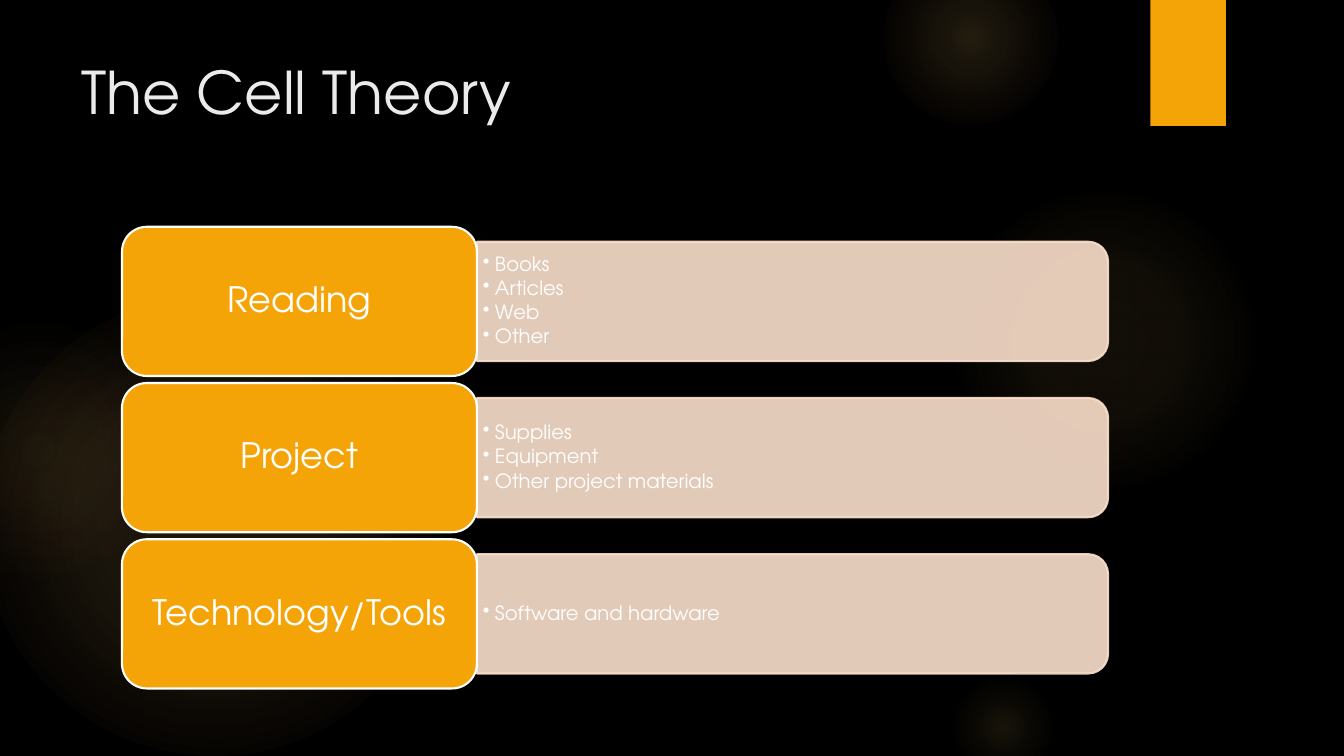
import lxml.etree
import pptx
import pptx.dml.color
import pptx.enum.shapes
import pptx.enum.text
import pptx.oxml
import pptx.oxml.ns
import pptx.util

FONT = "TeX Gyre Adventor"
AMBER, GLOW, PEACH, WHITE = "F5A408", "FAC96A", "FBE0CC", "FFFFFF"
SLIDE_W, SLIDE_H = 13.33, 7.5
ROW_TOP, ROW_PITCH, ROW_H = 2.25, 1.55, 1.48
ROW_LEFT, LABEL_W, BAR_W = 1.21, 3.52, 6.26

# left, top, diameter, stops of (position %, colour, opacity %)
GLOWS = [
    (-0.17, 2.92, 4.58, [(0, GLOW, 11), (36, GLOW, 10), (75, GLOW, 0)]),
    (-0.92, 3.17, 2.58, [(0, GLOW, 8), (36, GLOW, 5), (71, "F59B74", 0)]),
    (9.41, 1.83, 3.08, [(0, GLOW, 7), (36, GLOW, 6), (69, GLOW, 0)]),
    (8.75, -0.5, 1.75, [(0, GLOW, 14), (36, GLOW, 7), (73, GLOW, 0)]),
    (9.41, 6.67, 1.08, [(0, GLOW, 10), (31, GLOW, 5), (66, GLOW, 0)]),
]
RESOURCES = [
    ("Reading", ["Books", "Articles", "Web", "Other"]),
    ("Project", ["Supplies", "Equipment", "Other project materials"]),
    ("Technology/Tools", ["Software and hardware"]),
]
SHAPES = pptx.enum.shapes.MSO_SHAPE


def rgb(colour):
    return pptx.dml.color.RGBColor.from_string(colour)


def inches(*lengths):
    return [pptx.util.Inches(length) for length in lengths]


def add_child(parent, tag, **attributes):
    child = lxml.etree.SubElement(parent, pptx.oxml.ns.qn(tag))
    for name, value in attributes.items():
        child.set(name, str(value))
    return child


def set_opacity(fill_owner, percent):
    """Make every solid colour under the element partly transparent."""
    for colour in fill_owner.iter(pptx.oxml.ns.qn("a:srgbClr")):
        add_child(colour, "a:alpha", val=percent * 1000)


def draw_shape(slide, kind, box, fill=None, line=None):
    shape = slide.shapes.add_shape(kind, *inches(*box))
    shape.shadow.inherit = False
    if fill:
        shape.fill.solid()
        shape.fill.fore_color.rgb = rgb(fill)
    else:
        shape.fill.background()
    if line:
        shape.line.color.rgb = rgb(line)
        shape.line.width = pptx.util.Pt(1.5)
    else:
        shape.line.fill.background()
    return shape


def write(frame, lines, size, colour=WHITE, insets=(0.1, 0.05), centred=False,
          middle=True, spacing=0.9, after=0, bullet=None):
    anchors, aligns = pptx.enum.text.MSO_ANCHOR, pptx.enum.text.PP_ALIGN
    frame.word_wrap = True
    frame.vertical_anchor = anchors.MIDDLE if middle else anchors.TOP
    frame.margin_left, frame.margin_top = inches(*insets)
    frame.margin_right, frame.margin_bottom = inches(*insets)
    for index, line in enumerate(lines):
        paragraph = frame.add_paragraph() if index else frame.paragraphs[0]
        paragraph.alignment = aligns.CENTER if centred else aligns.LEFT
        paragraph.line_spacing = spacing
        paragraph.space_after = pptx.util.Pt(after)
        if bullet:
            properties = paragraph._p.get_or_add_pPr()
            indent = pptx.util.Inches(0.12)
            properties.set("marL", str(indent))
            properties.set("indent", str(-indent))
            add_child(properties, "a:buChar", char=bullet)
        run = paragraph.add_run()
        run.text = line
        run.font.name = FONT
        run.font.size = pptx.util.Pt(size)
        run.font.color.rgb = rgb(colour)


def draw_glow(slide, left, top, diameter, stops):
    glow = draw_shape(slide, SHAPES.OVAL, (left, top, diameter, diameter))
    gradient = pptx.oxml.parse_xml(
        "<a:gradFill %s/>" % pptx.oxml.ns.nsdecls("a"))
    stop_list = add_child(gradient, "a:gsLst")
    for position, colour, opacity in stops:
        stop = add_child(stop_list, "a:gs", pos=position * 1000)
        tint = add_child(stop, "a:srgbClr", val=colour)
        add_child(tint, "a:alpha", val=opacity * 1000)
    circle = add_child(gradient, "a:path")
    circle.set("path", "circle")
    add_child(circle, "a:fillToRect", l=50000, t=50000, r=50000, b=50000)
    properties = glow._element.spPr
    properties.replace(properties.find(pptx.oxml.ns.qn("a:noFill")), gradient)


def draw_backdrop(slide):
    slide.background.fill.solid()
    slide.background.fill.fore_color.rgb = rgb("000000")
    for glow in GLOWS:
        draw_glow(slide, *glow)
    draw_shape(slide, SHAPES.RECTANGLE, (11.41, 0, 0.75, SLIDE_H / 6), AMBER)


def draw_title(slide, box, title):
    heading = slide.shapes.add_textbox(*inches(*box))
    write(heading.text_frame, [title], 42, "EBEBEB", middle=False, spacing=1)


def draw_resource_row(slide, left, top, height, label, items):
    """Place a label and, to its right, a bar four fifths as high."""
    bar_left, bar_h = left + LABEL_W, height * 0.8
    middle = top + height / 2
    # Turned a quarter, so that the two rounded corners face right
    bar = draw_shape(
        slide, SHAPES.ROUND_2_SAME_RECTANGLE,
        (bar_left + (BAR_W - bar_h) / 2, middle - BAR_W / 2, bar_h, BAR_W),
        PEACH, PEACH)
    bar.rotation = 90
    set_opacity(bar._element.spPr, 90)

    details_h = bar_h * 0.9
    details = slide.shapes.add_textbox(
        *inches(bar_left, middle - details_h / 2, BAR_W - 0.06, details_h))
    write(details.text_frame, items, 14, insets=(0.06, 0.03), after=2.1,
          bullet="•")

    card = draw_shape(slide, SHAPES.ROUNDED_RECTANGLE,
                      (left, top, LABEL_W, height), AMBER, WHITE)
    write(card.text_frame, [label], 25, centred=True)


def main():
    deck = pptx.Presentation()
    deck.slide_width, deck.slide_height = inches(SLIDE_W, SLIDE_H)
    slide = deck.slides.add_slide(deck.slide_layouts[6])
    draw_backdrop(slide)
    draw_title(slide, (0.71, 0.5, 10.29, 1.53), "The Cell Theory")
    for row, (label, items) in enumerate(RESOURCES):
        draw_resource_row(slide, ROW_LEFT, ROW_TOP + row * ROW_PITCH, ROW_H,
                          label, items)
    deck.save("out.pptx")


if __name__ == "__main__":
    main()
